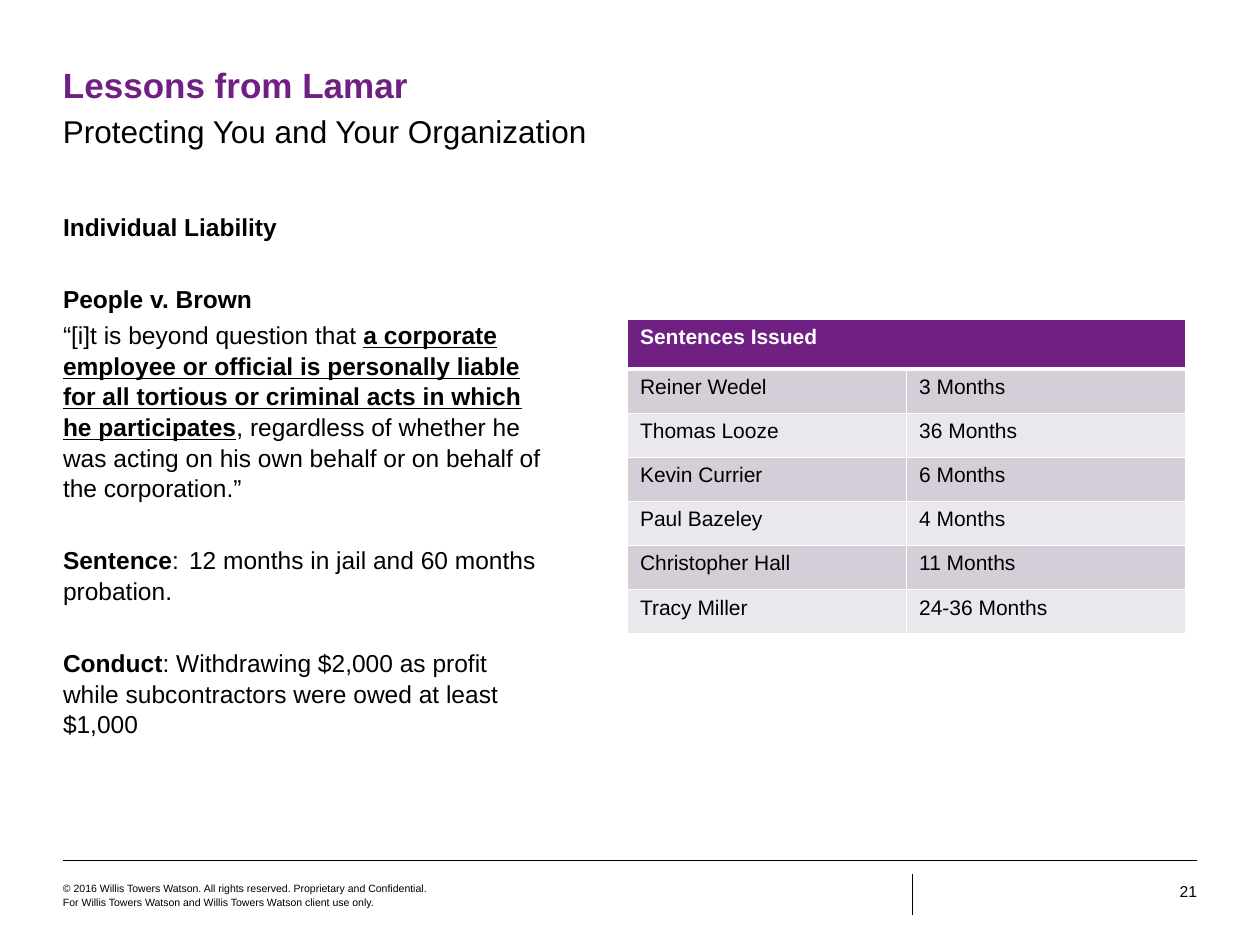
from lxml.etree import SubElement
from pptx import Presentation
from pptx.dml.color import RGBColor
from pptx.enum.shapes import MSO_CONNECTOR
from pptx.enum.text import MSO_ANCHOR, PP_ALIGN
from pptx.oxml.ns import qn
from pptx.util import Inches, Pt

PURPLE, BLACK, WHITE = "702082", "000000", "FFFFFF"
BANDS = ["D5CDD8", "EBE8ED"]
BOLD = {"bold": True}
STRONG = {"bold": True, "underline": True}
SECTION_GAP = {"space_before": Pt(20.3)}

TEXTS = [
    {"at": (0.5, 0.5, 9, 0.34), "size": 20, "color": PURPLE, "anchor": MSO_ANCHOR.BOTTOM,
     "paras": [([("Lessons from Lamar", BOLD)], {})]},
    {"at": (0.5, 0.88, 9, 0.3), "size": 18, "layout": {"line_spacing": 1.04},
     "paras": [([("Protecting You and Your Organization", {})], {})]},
    {"at": (0.5, 1.67, 3.85, 5), "size": 14,
     "layout": {"line_spacing": 1.04, "space_after": Pt(3.5)},
     "paras": [
         ([("Individual Liability", BOLD)], {}),
         ([("People v. Brown", BOLD)], SECTION_GAP),
         ([("“[i]t is beyond question that ", {}),
           ("a corporate employee or official is personally liable for all tortious "
            "or criminal acts in which he participates", STRONG),
           (", regardless of whether he was acting on his own behalf or on behalf "
            "of the corporation.”", {})], {}),
         ([("Sentence", BOLD),
           (": \t12 months in jail and 60 months probation.", {})], SECTION_GAP),
         ([("Conduct", BOLD),
           (": Withdrawing $2,000 as profit while subcontractors were owed at least $1,000", {})],
          SECTION_GAP),
     ]},
    {"at": (0.5, 7, 2.96, 0.27), "size": 6, "layout": {"line_spacing": 1.04},
     "paras": [([("© 2016 Willis Towers Watson. All rights reserved. Proprietary and Confidential. "
                  "For Willis Towers Watson and Willis Towers Watson client use only.", {})], {})]},
    {"at": (9.08, 7, 0.42, 0.15), "size": 9, "layout": {"alignment": PP_ALIGN.RIGHT},
     "paras": [([("21", {})], {})]},
]
RULES = [((0.5, 6.83), (9.5, 6.83), 0.25), ((7.24, 6.94), (7.24, 7.26), 0.75)]
TABLE_TITLE = "Sentences Issued"
SENTENCES = [
    ("Reiner Wedel", "3 Months"),
    ("Thomas Looze", "36 Months"),
    ("Kevin Currier", "6 Months"),
    ("Paul Bazeley", "4 Months"),
    ("Christopher Hall", "11 Months"),
    ("Tracy Miller", "24-36 Months"),
]


def rgb(value):
    return RGBColor.from_string(value)


def apply(target, values):
    for name, value in values.items():
        setattr(target, name, value)


def add_span(para, text, size, color, style):
    span = para.add_run()
    span.text = text
    apply(span.font, {"name": "Arial", "size": Pt(size), **style})
    span.font.color.rgb = rgb(color)


def add_text(page, item):
    box = page.shapes.add_textbox(*map(Inches, item["at"]))
    frame = box.text_frame
    apply(frame, {"word_wrap": True, "margin_left": 0, "margin_right": 0, "margin_top": 0,
                  "margin_bottom": 0, "vertical_anchor": item.get("anchor", MSO_ANCHOR.TOP)})
    for index, (spans, layout) in enumerate(item["paras"]):
        para = frame.add_paragraph() if index else frame.paragraphs[0]
        apply(para, {**item.get("layout", {}), **layout})
        for text, style in spans:
            add_span(para, text, item["size"], item.get("color", BLACK), style)


def add_rule(page, start, end, width):
    rule = page.shapes.add_connector(MSO_CONNECTOR.STRAIGHT, *map(Inches, start + end))
    rule.line.color.rgb = rgb(BLACK)
    rule.line.width = Pt(width)
    SubElement(rule._element.spPr, qn("a:effectLst"))


def style_cell(cell, fill, widths):
    properties = cell._tc.get_or_add_tcPr()
    for side, width in widths.items():
        border = SubElement(properties, qn(f"a:{side}"), w=str(Pt(width)))
        SubElement(SubElement(border, qn("a:solidFill")), qn("a:srgbClr"), val=WHITE)
    cell.fill.solid()
    cell.fill.fore_color.rgb = rgb(fill)


def add_sentences(page):
    rows = [(TABLE_TITLE, "")] + SENTENCES
    table = page.shapes.add_table(len(rows), 2, *map(Inches, (4.98, 2.53, 4.43, 2.5))).table
    for column in table.columns:
        column.width = Inches(2.215)
    for index, texts in enumerate(rows):
        header = index == 0
        table.rows[index].height = Inches(0.4 if header else 0.35)
        fill = PURPLE if header else BANDS[(index - 1) % 2]
        widths = {"lnL": 1, "lnR": 1, "lnT": 3 if index == 1 else 1, "lnB": 3 if header else 1}
        for cell, text in zip(table.rows[index].cells, texts):
            style_cell(cell, fill, widths)
            if text:
                para = cell.text_frame.paragraphs[0]
                para.alignment = PP_ALIGN.LEFT if header else PP_ALIGN.JUSTIFY
                add_span(para, text, 12, WHITE if header else BLACK, {"bold": header})
    table.cell(0, 0).merge(table.cell(0, 1))


def main():
    deck = Presentation()
    deck.slide_width, deck.slide_height = Inches(10), Inches(7.5)
    page = deck.slides.add_slide(deck.slide_layouts[6])
    for rule in RULES:
        add_rule(page, *rule)
    for item in TEXTS:
        add_text(page, item)
    add_sentences(page)
    deck.save("out.pptx")


if __name__ == "__main__":
    main()
